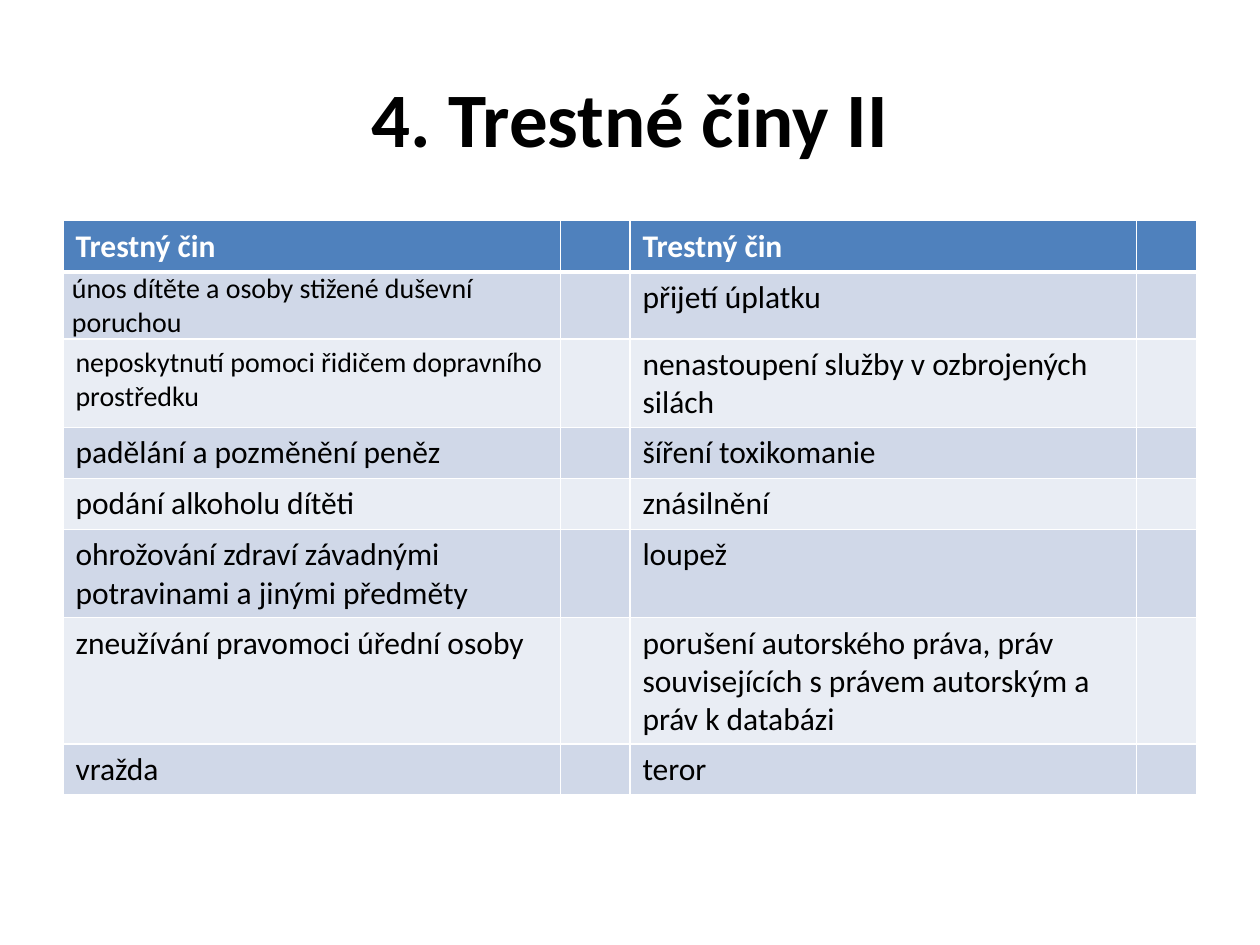
from lxml import etree
from pptx import Presentation
from pptx.dml.color import RGBColor
from pptx.enum import text
from pptx.oxml.ns import qn
from pptx.util import Cm, Pt

FONT = "Calibri"
HUES = {"head": "4F81BD", "dark": "D0D8E8", "light": "E9EDF4",
        "white": "FFFFFF", "black": "000000"}
TITLE = "4. Trestné činy II"
CRIMES = [
    ("Trestný čin", "Trestný čin"),
    ("únos dítěte a osoby stižené duševní poruchou", "přijetí úplatku"),
    ("neposkytnutí pomoci řidičem dopravního prostředku",
     "nenastoupení služby v ozbrojených silách"),
    ("padělání a pozměnění peněz", "šíření toxikomanie"),
    ("podání alkoholu dítěti", "znásilnění"),
    ("ohrožování zdraví závadnými potravinami a jinými předměty", "loupež"),
    ("zneužívání pravomoci úřední osoby",
     "porušení autorského práva, práv souvisejících s právem autorským a práv k databázi"),
    ("vražda", "teror"),
]
SMALL = {(1, 0), (2, 0)}
WIDTHS = [10.03, 1.4, 10.21, 1.22]
LEFT, WIDE, ROW = 1.27, 22.86, 1.03


def style(par, size, hue, bold):
    for run in par.runs:
        font = run.font
        font.name, font.size, font.bold = FONT, Pt(size), bold
        font.color.rgb = RGBColor.from_string(HUES[hue])


def edge(cell, sides):
    """Draw white borders; sides maps L, R, T, B to widths in points."""
    props = cell._tc.get_or_add_tcPr()
    for spot, (side, width) in enumerate(sides.items()):
        line = etree.Element(qn("a:ln" + side), w=str(Pt(width)))
        fill = etree.SubElement(line, qn("a:solidFill"))
        etree.SubElement(fill, qn("a:srgbClr"), val=HUES["white"])
        props.insert(spot, line)


def add_title(slide):
    box = slide.shapes.add_textbox(Cm(LEFT), Cm(0.76), Cm(WIDE), Cm(3.18))
    frame = box.text_frame
    frame.word_wrap = True
    frame.vertical_anchor = text.MSO_ANCHOR.MIDDLE
    frame.text = TITLE
    par = frame.paragraphs[0]
    par.alignment = text.PP_ALIGN.CENTER
    style(par, 44, "black", True)


def add_grid(slide):
    count = len(CRIMES)
    frame = slide.shapes.add_table(count, len(WIDTHS), Cm(LEFT), Cm(4.45),
                                   Cm(WIDE), Cm(ROW * count))
    table = frame.table
    for col, width in zip(table.columns, WIDTHS):
        col.width = Cm(width)
    for r, (first, second) in enumerate(CRIMES):
        table.rows[r].height = Cm(ROW)
        hue = "head" if r == 0 else "dark" if r % 2 else "light"
        for c, words in enumerate((first, "", second, "")):
            cell = table.cell(r, c)
            cell.fill.solid()
            cell.fill.fore_color.rgb = RGBColor.from_string(HUES[hue])
            edge(cell, {"L": 1, "R": 1, "T": 3 if r == 1 else 1,
                        "B": 3 if r == 0 else 1})
            if words:
                cell.text_frame.text = words
                style(cell.text_frame.paragraphs[0],
                      16 if (r, c) in SMALL else 18,
                      "white" if r == 0 else "black", r == 0)
    tight = table.cell(1, 0)
    tight.margin_left = tight.margin_right = Cm(0.18)
    tight.margin_top = tight.margin_bottom = Cm(0)
    frame.height = Cm(11.58)


def main():
    deck = Presentation()
    deck.slide_width, deck.slide_height = Cm(25.4), Cm(19.05)
    slide = deck.slides.add_slide(deck.slide_layouts[6])
    add_title(slide)
    add_grid(slide)
    deck.save("out.pptx")


if __name__ == "__main__":
    main()
